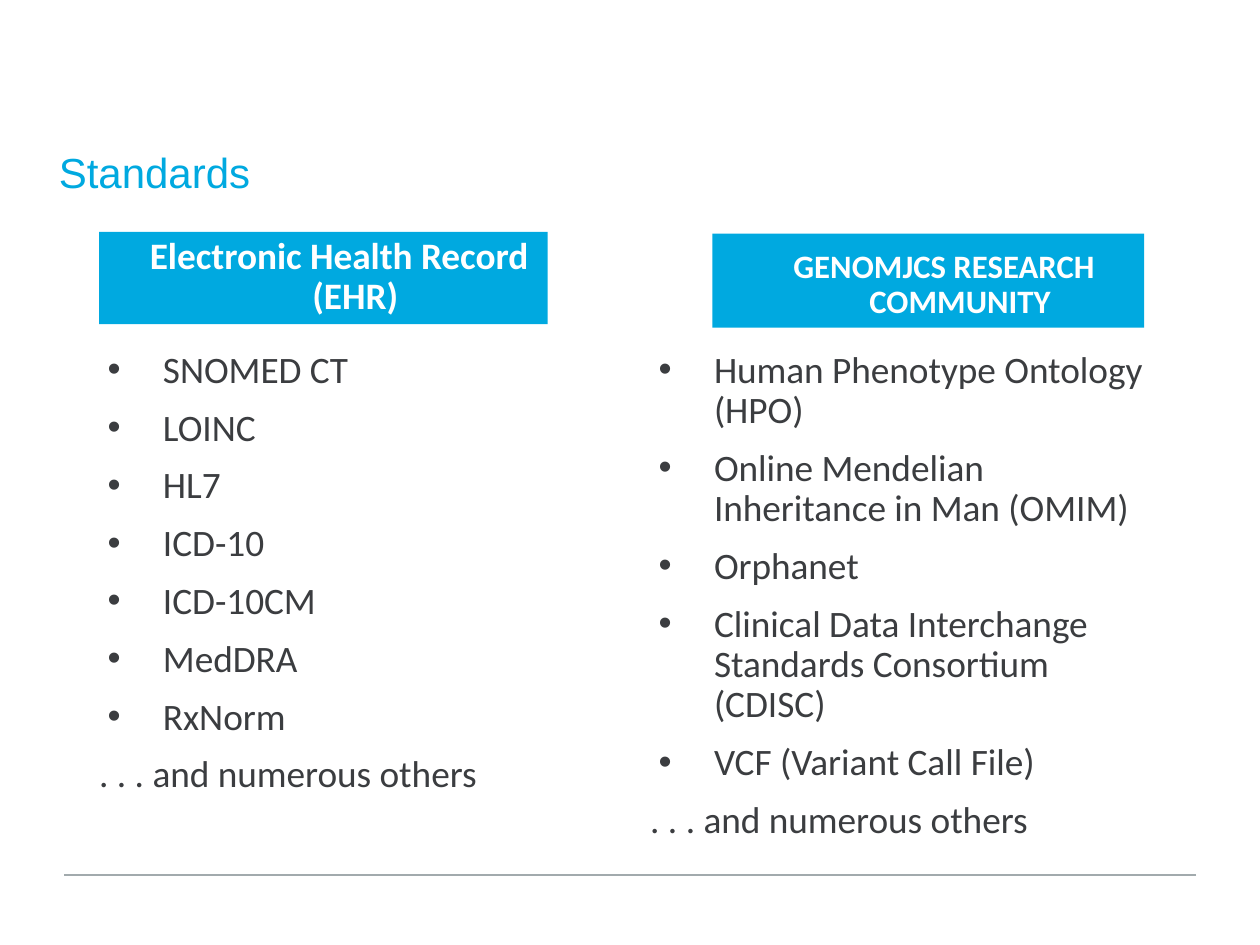
from lxml.etree import SubElement
from pptx import Presentation
from pptx.dml.color import RGBColor
from pptx.enum.shapes import MSO_CONNECTOR
from pptx.enum.text import MSO_ANCHOR, MSO_AUTO_SIZE, PP_ALIGN
from pptx.oxml.ns import qn
from pptx.util import Inches, Pt

BLUE, INK, WHITE, GREY = "00A9E0", "3B3D40", "FFFFFF", "A2AAAD"
CLOSING = ". . . and numerous others"


def place(holder, box, anchor, inset_x=0.07, inset_y=0.04):
    """Move a placeholder to a box in inches and return its cleaned text frame."""
    holder.left, holder.top, holder.width, holder.height = map(Inches, box)
    frame = holder.text_frame
    frame.word_wrap = True
    frame.auto_size = MSO_AUTO_SIZE.NONE
    frame.vertical_anchor = anchor
    frame.margin_left = frame.margin_right = Inches(inset_x)
    frame.margin_top = frame.margin_bottom = Inches(inset_y)
    return frame


def write(paragraph, text, size, color, font="Calibri", bold=False, spacing=0.9,
          align=PP_ALIGN.LEFT, margin=0, indent=0, bullet=None, before=0):
    properties = paragraph._p.get_or_add_pPr()
    properties.set("marL", str(Inches(margin)))
    properties.set("indent", str(Inches(indent)))
    if bullet:
        bullet_color = SubElement(properties, qn("a:buClr"))
        SubElement(bullet_color, qn("a:srgbClr"), val=color)
        SubElement(properties, qn("a:buFont"), typeface="Arial")
        SubElement(properties, qn("a:buChar"), char=bullet)
    else:
        SubElement(properties, qn("a:buNone"))
    paragraph.alignment = align
    paragraph.line_spacing = spacing
    paragraph.space_before = Pt(before)
    run = paragraph.add_run()
    run.text = text
    run.font.size = Pt(size)
    run.font.name = font
    run.font.bold = bold
    run.font.color.rgb = RGBColor.from_string(color)


deck = Presentation()
deck.slide_width = Inches(7.5)
deck.slide_height = deck.slide_width * 3 // 4
slide = deck.slides.add_slide(deck.slide_layouts.get_by_name("Comparison"))
holders = slide.placeholders

title = place(holders[0], (0.35, 0.71, 6.75, 0.62), MSO_ANCHOR.MIDDLE, 0, 0)
write(title.paragraphs[0], "Standards", 18, BLUE, font="Arial", spacing=1.0)

# Heading, its size and box, list box, standards
columns = [
    ("Electronic Health Record (EHR)", 16, (0.59, 1.38, 2.67, 0.55),
     (0.52, 2.05, 3.17, 3.02),
     ["SNOMED CT", "LOINC", "HL7", "ICD-10", "ICD-10CM", "MedDRA", "RxNorm"]),
    ("GENOMJCS RESEARCH COMMUNITY", 14, (4.24, 1.39, 2.57, 0.56),
     (3.8, 2.05, 3.19, 3.02),
     ["Human Phenotype Ontology (HPO)",
      "Online Mendelian Inheritance in Man (OMIM)",
      "Orphanet",
      "Clinical Data Interchange Standards Consortium (CDISC)",
      "VCF (Variant Call File)"]),
]

for column, (heading, heading_size, heading_box, list_box, standards) in enumerate(columns):
    banner = holders[1 + 2 * column]
    banner.fill.solid()
    banner.fill.fore_color.rgb = RGBColor.from_string(BLUE)
    banner_text = place(banner, heading_box, MSO_ANCHOR.BOTTOM)
    write(banner_text.paragraphs[0], heading, heading_size, WHITE, bold=True,
          align=PP_ALIGN.CENTER, margin=0.38, indent=-0.19)

    listing = place(holders[2 + 2 * column], list_box, MSO_ANCHOR.TOP)
    for row, standard in enumerate(standards):
        paragraph = listing.add_paragraph() if row else listing.paragraphs[0]
        write(paragraph, standard, 16, INK, margin=0.38, indent=-0.33,
              bullet="•", before=7.5 if row else 0)
    write(listing.add_paragraph(), CLOSING, 16, INK, before=7.5)

footer_rule = slide.shapes.add_connector(
    MSO_CONNECTOR.STRAIGHT, Inches(7.12), Inches(5.21), Inches(0.38), Inches(5.21))
footer_rule.line.color.rgb = RGBColor.from_string(GREY)
footer_rule.line.width = Pt(0.75)
SubElement(footer_rule._element.spPr, qn("a:effectLst"))

deck.save("out.pptx")
